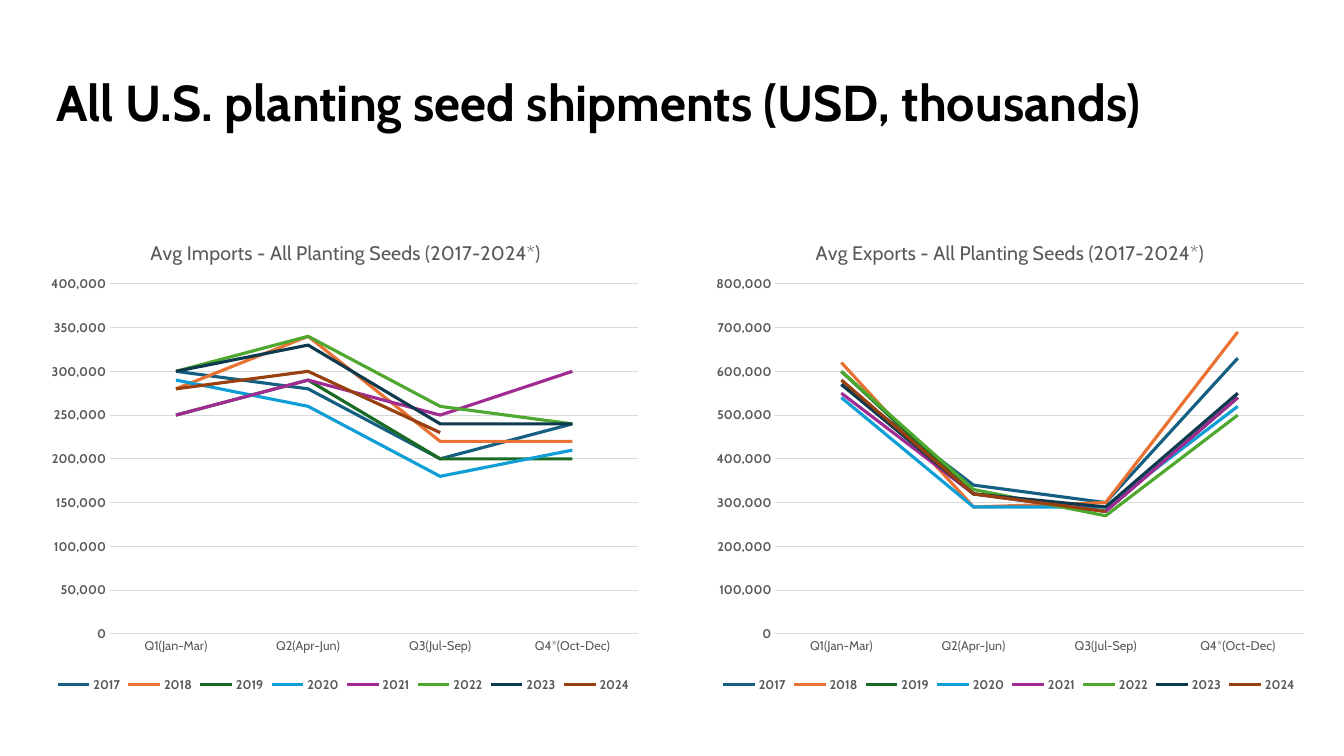
import pptx
import pptx.chart.data
import pptx.dml.color
import pptx.enum.chart
import pptx.enum.text
import pptx.oxml
import pptx.oxml.ns
import pptx.util
from pptx.util import Cm

FONT = "Cabin"
GRAY = "595959"
RULE = "D9D9D9"
QUARTERS = ["Q1(Jan-Mar)", "Q2(Apr-Jun)", "Q3(Jul-Sep)", "Q4*(Oct-Dec)"]
YEAR_COLORS = {
    "2017": "156082", "2018": "E97132", "2019": "196B24", "2020": "0F9ED5",
    "2021": "A02B93", "2022": "4EA72E", "2023": "0D3A4E", "2024": "994010",
}
EXPORTS = [
    (570000, 340000, 300000, 630000),
    (620000, 290000, 300000, 690000),
    (600000, 320000, 280000, 540000),
    (540000, 290000, 290000, 520000),
    (550000, 320000, 280000, 540000),
    (600000, 330000, 270000, 500000),
    (570000, 320000, 290000, 550000),
    (580000, 320000, 280000, None),
]
IMPORTS = [
    (300000, 280000, 200000, 240000),
    (280000, 340000, 220000, 220000),
    (250000, 290000, 200000, 200000),
    (290000, 260000, 180000, 210000),
    (250000, 290000, 250000, 300000),
    (300000, 340000, 260000, 240000),
    (300000, 330000, 240000, 240000),
    (280000, 300000, 230000, None),
]


def color(value):
    return pptx.dml.color.RGBColor.from_string(value)


def style_font(font, size, value, bold=False):
    font.name = FONT
    font.size = pptx.util.Pt(size)
    font.bold = bold
    font.color.rgb = color(value)


def style_line(line, value, width):
    line.color.rgb = color(value)
    line.width = pptx.util.Pt(width)


def set_layout(parent, index, settings):
    for layout in parent.findall(pptx.oxml.ns.qn("c:layout")):
        parent.remove(layout)
    items = "".join(f'<c:{name} val="{value}"/>' for name, value in settings.items())
    parent.insert(index, pptx.oxml.parse_xml(
        f'<c:layout {pptx.oxml.ns.nsdecls("c")}>'
        f"<c:manualLayout>{items}</c:manualLayout></c:layout>"))


def add_heading(page, box, text):
    frame = page.shapes.add_textbox(*box).text_frame
    frame.word_wrap = True
    frame.vertical_anchor = pptx.enum.text.MSO_ANCHOR.MIDDLE
    para = frame.paragraphs[0]
    para.line_spacing = 0.9
    span = para.add_run()
    span.text = text
    style_font(span.font, 36, "000000", True)


def style_axes(chart, top, step):
    quarters, amounts = chart.category_axis, chart.value_axis
    for axis in (quarters, amounts):
        axis.major_tick_mark = pptx.enum.chart.XL_TICK_MARK.NONE
        axis.minor_tick_mark = pptx.enum.chart.XL_TICK_MARK.NONE
        style_font(axis.tick_labels.font, 9, GRAY, axis is amounts)
    style_line(quarters.format.line, RULE, 0.75)
    amounts.format.line.fill.background()
    amounts.minimum_scale = 0
    amounts.maximum_scale = top
    amounts.major_unit = step
    amounts.tick_labels.number_format = "#,##0"
    amounts.tick_labels.number_format_is_linked = False
    style_line(amounts.major_gridlines.format.line, RULE, 0.75)


def add_shipments(page, box, title, rows, top, step):
    data = pptx.chart.data.CategoryChartData(number_format="#,##0")
    data.categories = QUARTERS
    for year, values in zip(YEAR_COLORS, rows):
        data.add_series(year, values)
    chart = page.shapes.add_chart(
        pptx.enum.chart.XL_CHART_TYPE.LINE, *box, data).chart
    style_font(chart.font, 10, "000000")

    span = chart.chart_title.text_frame.paragraphs[0].add_run()
    span.text = title
    style_font(span.font, 14, GRAY)
    chart.chart_title.include_in_layout = False
    set_layout(chart.chart_title._element, 1,
               {"xMode": "edge", "yMode": "edge", "x": 0.18, "y": 0.04})

    style_axes(chart, top, step)
    plot = chart.plots[0]
    plot.vary_by_categories = False
    for series in plot.series:
        series.smooth = False
        style_line(series.format.line, YEAR_COLORS[series.name], 2.25)
    set_layout(plot._element.getparent(), 0, {
        "layoutTarget": "inner", "xMode": "edge", "yMode": "edge",
        "x": 0.12, "y": 0.14, "w": 0.86, "h": 0.73})

    chart.has_legend = True
    chart.legend.position = pptx.enum.chart.XL_LEGEND_POSITION.BOTTOM
    chart.legend.include_in_layout = False
    style_font(chart.legend.font, 9, GRAY, True)


def main():
    deck = pptx.Presentation()
    deck.slide_width, deck.slide_height = Cm(33.87), Cm(19.05)
    page = deck.slides.add_slide(deck.slide_layouts[6])
    add_heading(page, (Cm(1.17), Cm(0.81), Cm(29.21), Cm(3.68)),
                "All U.S. planting seed shipments (USD, thousands)")
    charts = [
        (17.68, "Avg Exports - All Planting Seeds (2017-2024*)", EXPORTS, 800000, 100000),
        (0.91, "Avg Imports - All Planting Seeds (2017-2024*)", IMPORTS, 400000, 50000),
    ]
    for left, title, rows, top, step in charts:
        box = (Cm(left), Cm(5.46), Cm(15.49), Cm(12.09))
        add_shipments(page, box, title, rows, top, step)
    deck.save("out.pptx")


if __name__ == "__main__":
    main()
